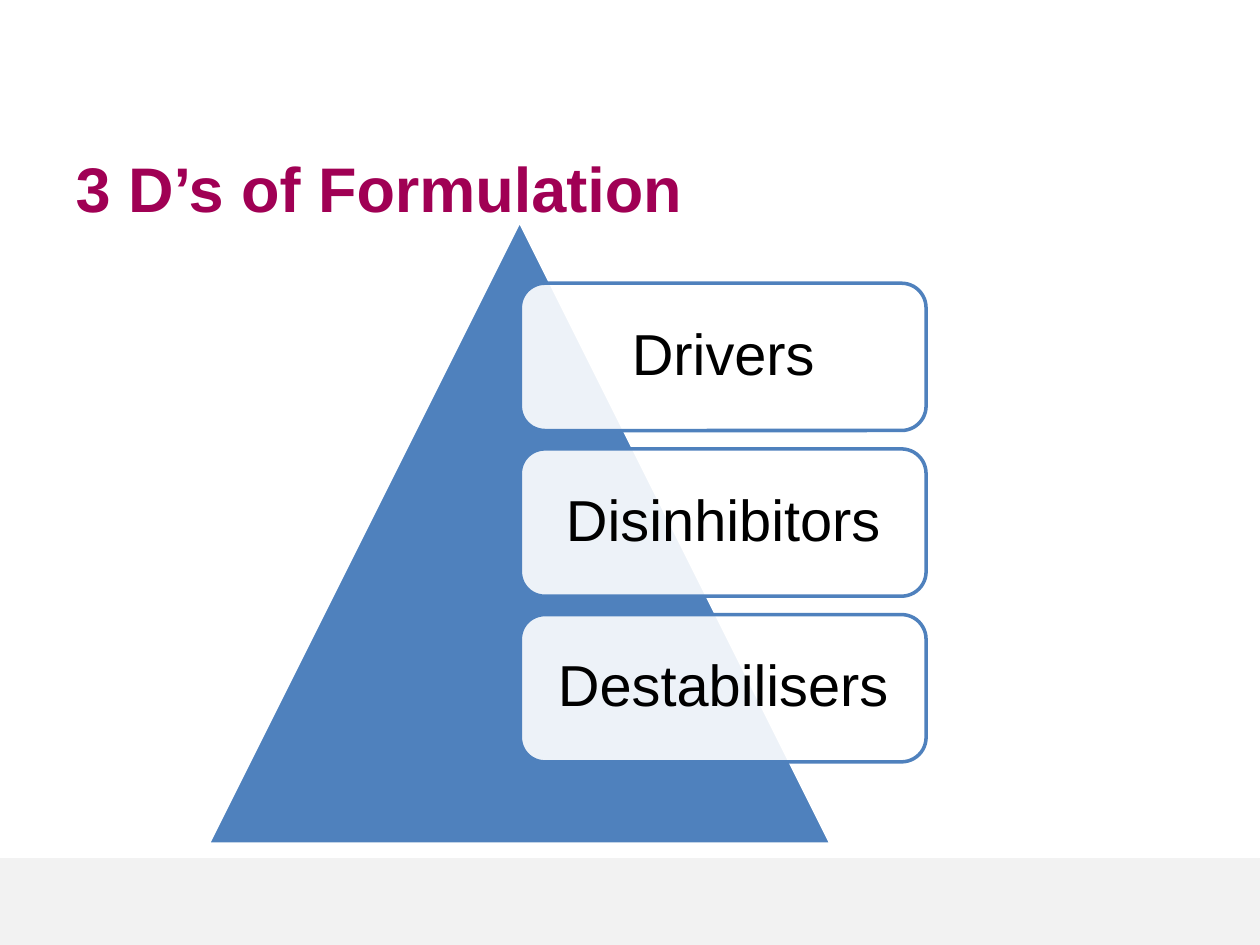
from lxml.etree import SubElement
from pptx import Presentation
from pptx.dml.color import RGBColor
from pptx.enum.shapes import MSO_SHAPE
from pptx.enum.text import MSO_ANCHOR, PP_ALIGN
from pptx.oxml.ns import qn
from pptx.util import Cm, Pt

PLUM = RGBColor(0xA0, 0x00, 0x54)
BLUE = RGBColor(0x4F, 0x81, 0xBD)
PALE_GREY = RGBColor(0xF2, 0xF2, 0xF2)
WHITE = RGBColor(0xFF, 0xFF, 0xFF)
BLACK = RGBColor(0x00, 0x00, 0x00)

FACTORS = ["Drivers", "Disinhibitors", "Destabilisers"]
CARD_LEFT, FIRST_CARD_TOP = 10.49, 5.71
CARD_WIDTH, CARD_HEIGHT, CARD_PITCH = 8.18, 2.97, 3.34


def set_attributes(target, values):
    for name, value in values.items():
        setattr(target, name, value)


def add_filled_shape(slide, kind, left, top, width, height, fill, line=None):
    shape = slide.shapes.add_shape(kind, Cm(left), Cm(top), Cm(width), Cm(height))
    shape.shadow.inherit = False
    shape.fill.solid()
    shape.fill.fore_color.rgb = fill
    if line is None:
        shape.line.fill.background()
    else:
        shape.line.color.rgb = line
        shape.line.width = Pt(2)
    return shape


def set_opacity(shape, percent):
    color = shape.fill._xPr.find(qn("a:solidFill"))[0]
    SubElement(color, qn("a:alpha"), val=str(percent * 1000))


def write_text(shape, text, frame_format, paragraph_format, font_format, color):
    frame = shape.text_frame
    frame.text = text
    set_attributes(frame, {"word_wrap": True, "vertical_anchor": MSO_ANCHOR.MIDDLE,
                           **frame_format})
    paragraph = frame.paragraphs[0]
    set_attributes(paragraph, paragraph_format)
    font = paragraph.runs[0].font
    set_attributes(font, {"name": "Arial", **font_format})
    font.color.rgb = color


def add_title(slide, text):
    title = slide.shapes.title
    set_attributes(title, {"left": Cm(1.27), "top": Cm(2.84),
                           "width": Cm(21.59), "height": Cm(1.88)})
    write_text(title, text, {}, {"alignment": PP_ALIGN.LEFT},
               {"size": Pt(36), "bold": True}, PLUM)


def add_factor_card(slide, text, top):
    card = add_filled_shape(slide, MSO_SHAPE.ROUNDED_RECTANGLE, CARD_LEFT, top,
                            CARD_WIDTH, CARD_HEIGHT, WHITE, BLUE)
    set_opacity(card, 90)
    margins = {f"margin_{side}": Cm(0.5) for side in ("left", "top", "right", "bottom")}
    write_text(card, text, margins,
               {"alignment": PP_ALIGN.CENTER, "line_spacing": 0.9},
               {"size": Pt(33)}, BLACK)


def main():
    presentation = Presentation()
    set_attributes(presentation, {"slide_width": Cm(25.4), "slide_height": Cm(19.05)})
    slide = presentation.slides.add_slide(presentation.slide_layouts[5])

    add_filled_shape(slide, MSO_SHAPE.RECTANGLE, 0, 17.3, 25.4, 1.75, PALE_GREY)
    add_title(slide, "3 D’s of Formulation")
    add_filled_shape(slide, MSO_SHAPE.ISOSCELES_TRIANGLE, 4.19, 4.45, 12.57, 12.57,
                     BLUE, WHITE)
    for index, factor in enumerate(FACTORS):
        add_factor_card(slide, factor, FIRST_CARD_TOP + index * CARD_PITCH)

    presentation.save("out.pptx")


if __name__ == "__main__":
    main()
